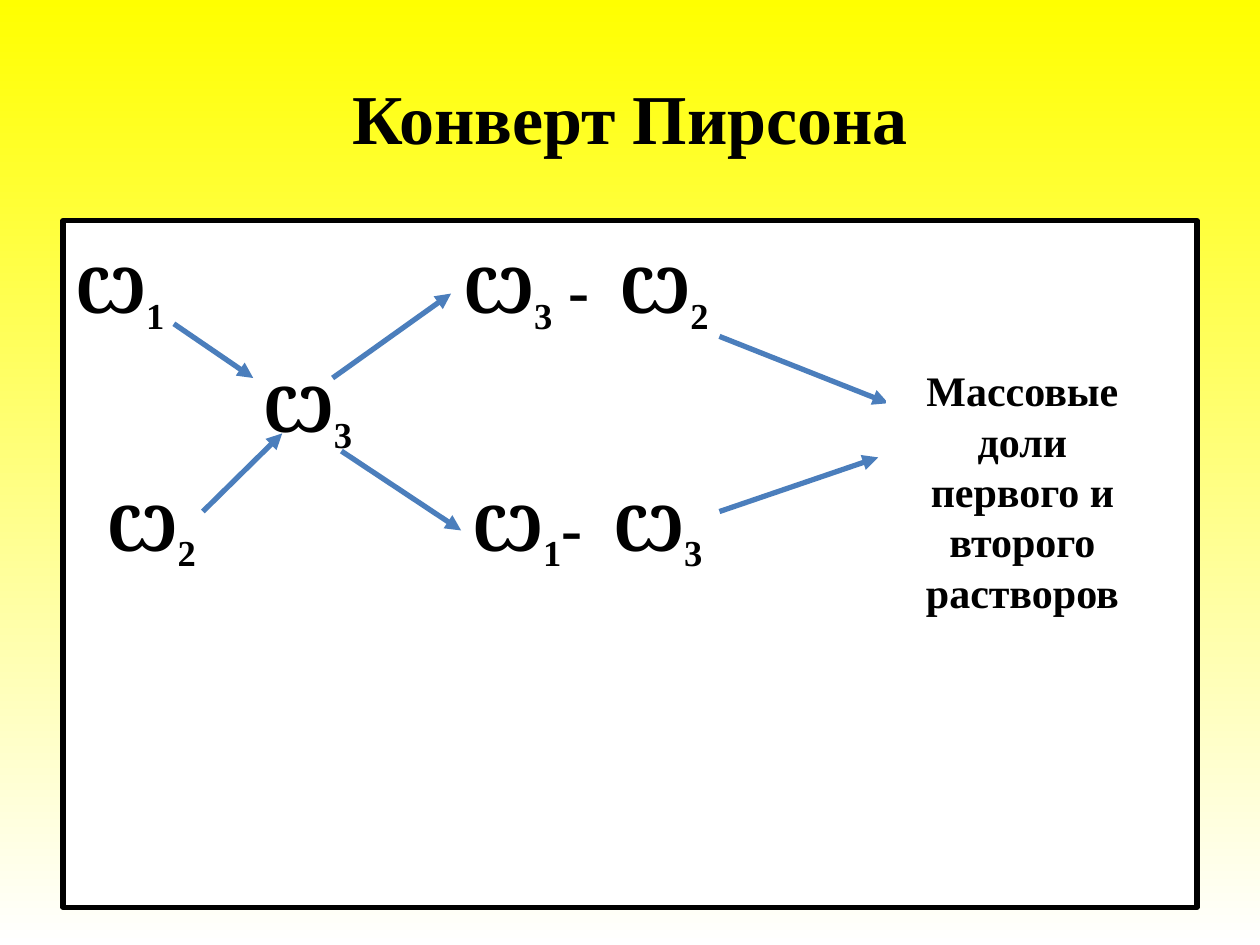
from lxml.etree import SubElement
from pptx import Presentation
from pptx.dml.color import RGBColor
from pptx.enum.shapes import MSO_CONNECTOR, MSO_SHAPE
from pptx.enum.text import MSO_ANCHOR, PP_ALIGN
from pptx.oxml.ns import qn
from pptx.util import Inches, Pt

COLORS = {"yellow": "FFFF00", "white": "FFFFFF", "black": "000000", "arrow": "4B7EBC"}
FONT = "Times New Roman"
OMEGA = "Ꙍ"
TITLE = "Конверт Пирсона"
LABEL = "Массовые доли первого и второго растворов"

# Each row: its tab stops in inches, then (text, is_subscript) runs.
FORMULA_ROWS = [
    ((3.08, 4.32), [(OMEGA, False), ("1", True), ("\t" + OMEGA, False), ("3", True),
                    (" -\t" + OMEGA, False), ("2", True)]),
    ((1.49,), [("\t" + OMEGA, False), ("3", True)]),
    ((0.25, 3.15, 4.27), [("\t" + OMEGA, False), ("2", True), ("\t" + OMEGA, False),
                          ("1", True), ("-\t" + OMEGA, False), ("3", True)]),
]
ARROWS = [
    ((1.38, 2.57), (2.01, 3.00)),
    ((1.61, 4.06), (2.24, 3.44)),
    ((2.64, 3.00), (3.58, 2.33)),
    ((2.71, 3.58), (3.66, 4.21)),
    ((5.71, 2.67), (7.05, 3.20)),
    ((5.71, 4.06), (6.97, 3.63)),
]


def color(name):
    return RGBColor.from_string(COLORS[name])


def add_run(paragraph, text, size, subscript=False):
    run = paragraph.add_run()
    run.text = text
    run.font.name, run.font.size, run.font.bold = FONT, Pt(size), True
    run.font.color.rgb = color("black")
    if subscript:
        run.font._element.set("baseline", "-25000")


def add_panel(slide, box, outline, width):
    panel = slide.shapes.add_shape(MSO_SHAPE.RECTANGLE, *map(Inches, box))
    panel.shadow.inherit = False
    panel.fill.solid()
    panel.fill.fore_color.rgb = color("white")
    panel.line.color.rgb = color(outline)
    panel.line.width = Pt(width)
    return panel


def write_centered(shape, text, size):
    frame = shape.text_frame
    frame.word_wrap = True
    frame.vertical_anchor = MSO_ANCHOR.MIDDLE
    frame.paragraphs[0].alignment = PP_ALIGN.CENTER
    add_run(frame.paragraphs[0], text, size)


def write_formulas(panel):
    frame = panel.text_frame
    frame.word_wrap = True
    frame.vertical_anchor = MSO_ANCHOR.MIDDLE
    frame.margin_bottom = Inches(2.5)
    for index, (stops, runs) in enumerate(FORMULA_ROWS):
        row = frame.add_paragraph() if index else frame.paragraphs[0]
        row.alignment = PP_ALIGN.LEFT
        row.line_spacing = 1.07
        row.space_before, row.space_after = Pt(7.2), Pt(8)
        tabs = SubElement(row._p.get_or_add_pPr(), qn("a:tabLst"))
        for stop in stops:
            SubElement(tabs, qn("a:tab"), pos=str(Inches(stop)), algn="l")
        for text, subscript in runs:
            add_run(row, text, 36, subscript)


def add_arrow(slide, start, end):
    arrow = slide.shapes.add_connector(MSO_CONNECTOR.STRAIGHT, *map(Inches, start + end))
    arrow.line.color.rgb = color("arrow")
    arrow.line.width = Pt(3)
    SubElement(arrow.line._get_or_add_ln(), qn("a:tailEnd"), type="triangle")
    SubElement(arrow._element.spPr, qn("a:effectLst"))


def main():
    deck = Presentation()
    deck.slide_width, deck.slide_height = Inches(10), Inches(7.5)
    slide = deck.slides.add_slide(deck.slide_layouts[6])

    backdrop = slide.background.fill
    backdrop.gradient()
    backdrop.gradient_angle = 270
    for stop, name in zip(backdrop.gradient_stops, ("yellow", "white")):
        stop.color.rgb = color(name)

    title = slide.shapes.add_textbox(*map(Inches, (0.5, 0.3, 9, 1.25)))
    write_centered(title, TITLE, 40)
    write_formulas(add_panel(slide, (0.5, 1.75, 9, 5.45), "black", 3))
    for start, end in ARROWS:
        add_arrow(slide, start, end)
    label = add_panel(slide, (7.05, 2.78, 2.13, 2.23), "white", 2)
    write_centered(label, LABEL, 24)

    deck.save("out.pptx")


if __name__ == "__main__":
    main()
